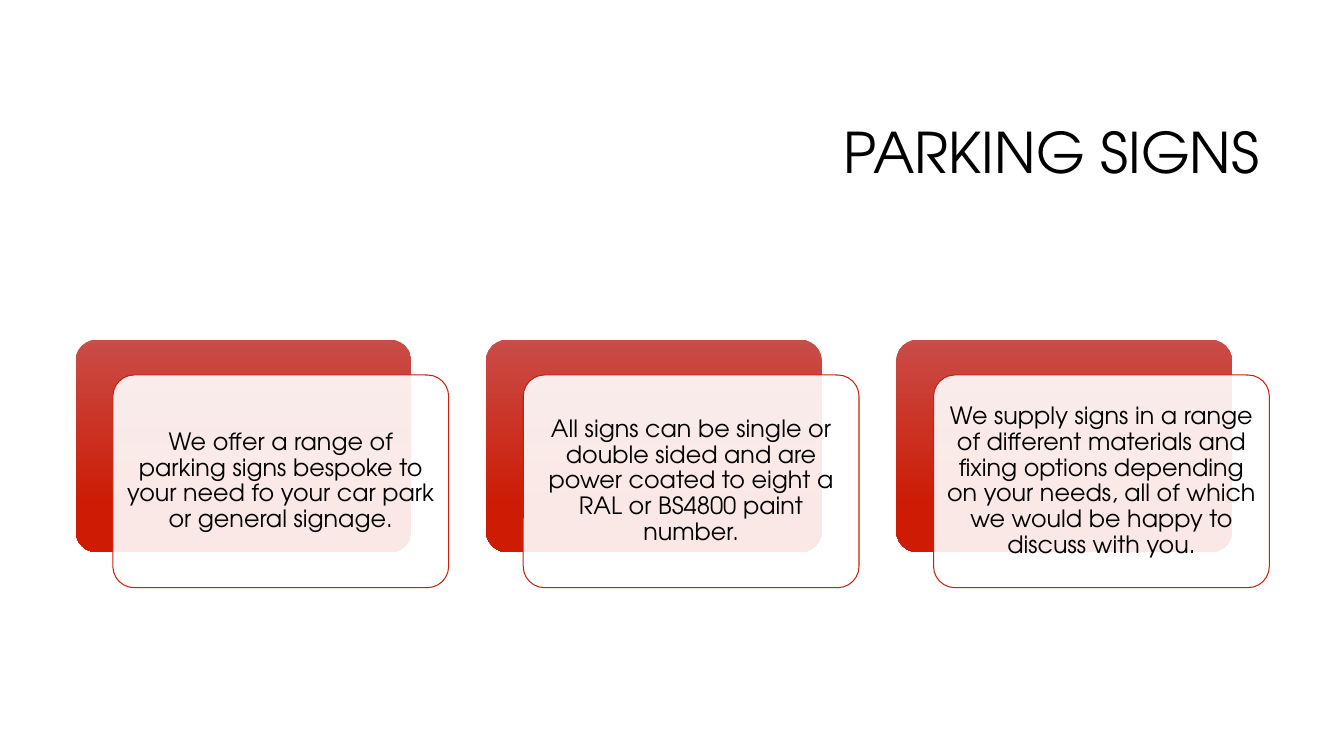
import pptx
import pptx.dml.color
import pptx.enum.shapes
import pptx.enum.text
import pptx.oxml
import pptx.oxml.ns
import pptx.util

CARD_TEXTS = [
    "We offer a range of parking signs bespoke to your need fo your car park "
    "or general signage.",
    "All signs can be single or double sided and are power coated to eight a "
    "RAL or BS4800 paint number.",
    "We supply signs in a range of different materials and fixing options "
    "depending on your needs, all of which we would be happy to discuss with you.",
]


def color(hex_text):
    return pptx.dml.color.RGBColor.from_string(hex_text)


class SignSlide:
    font_name = "TeX Gyre Adventor"
    ink, outline, panel_fill = "000000", "C4220D", "FFFFFF"
    gradient = [(0, "C94D48"), (0.78, "CD1B04")]
    # Grid: a card is 9 columns by 6 rows, its panel is one cell further on
    left, top = 0.75, 0.84
    column, row = 0.37, 2.11 / 6
    card_columns, card_rows, card_pitch = 9, 6, 11

    def __init__(self, deck):
        self.page = deck.slides.add_slide(deck.slide_layouts[5])
        self.cards = None

    def place(self, column, row, columns, rows):
        lengths = (self.left + column * self.column, self.top + row * self.row,
                   columns * self.column, rows * self.row)
        return [pptx.util.Inches(length) for length in lengths]

    def set_text(self, shape, text, size, alignment):
        frame = shape.text_frame
        frame.text = text
        frame.word_wrap = True
        frame.auto_size = pptx.enum.text.MSO_AUTO_SIZE.NONE
        frame.vertical_anchor = pptx.enum.text.MSO_ANCHOR.MIDDLE
        para = frame.paragraphs[0]
        para.alignment = alignment
        para.line_spacing = 0.9
        para.font.name = self.font_name
        para.font.size = pptx.util.Pt(size)
        para.font.color.rgb = color(self.ink)
        return frame

    def title(self, text, column, row, columns, rows):
        title = self.page.shapes.title
        title.left, title.top, title.width, title.height = self.place(
            column, row, columns, rows)
        self.set_text(title, text, 40, pptx.enum.text.PP_ALIGN.RIGHT)

    def rounded_box(self, column, row):
        box = self.cards.shapes.add_shape(
            pptx.enum.shapes.MSO_SHAPE.ROUNDED_RECTANGLE,
            *self.place(column, row, self.card_columns, self.card_rows))
        box.adjustments[0] = 0.1
        box.shadow.inherit = False
        return box

    def backing(self, column, row):
        box = self.rounded_box(column, row)
        box.line.fill.background()
        box.fill.gradient()
        box.fill.gradient_angle = 270
        for stop, (position, shade) in zip(box.fill.gradient_stops, self.gradient):
            stop.position = position
            stop.color.rgb = color(shade)

    def panel(self, column, row, text):
        box = self.rounded_box(column, row)
        box.fill.solid()
        box.fill.fore_color.rgb = color(self.panel_fill)
        # 90 % opaque, so the backing shines through
        fill_color = box.element.spPr.find(
            "./" + pptx.oxml.ns.qn("a:solidFill") + "/" + pptx.oxml.ns.qn("a:srgbClr"))
        fill_color.append(pptx.oxml.parse_xml(
            f'<a:alpha {pptx.oxml.ns.nsdecls("a")} val="90000"/>'))
        box.line.color.rgb = color(self.outline)
        box.line.width = pptx.util.Pt(0.75)
        frame = self.set_text(box, text, 17, pptx.enum.text.PP_ALIGN.CENTER)
        inset = pptx.util.Inches(0.07)
        frame.margin_left = frame.margin_right = inset
        frame.margin_top = frame.margin_bottom = inset

    def card_row(self, texts, row):
        self.cards = self.page.shapes.add_group_shape()
        for index, text in enumerate(texts):
            column = index * self.card_pitch
            self.backing(column, row)
            self.panel(column + 1, row + 1, text)


def main():
    deck = pptx.Presentation()
    deck.slide_width = pptx.util.Inches(13.33)
    deck.slide_height = pptx.util.Inches(7.5)
    slide = SignSlide(deck)

    # Heading, flush with the right edge of the last card
    slide.title("PARKING SIGNS", column=6.54, row=0, columns=25.46, rows=4)

    # Three overlapping cards
    slide.card_row(CARD_TEXTS, row=7.19)

    deck.save("out.pptx")


if __name__ == "__main__":
    main()
